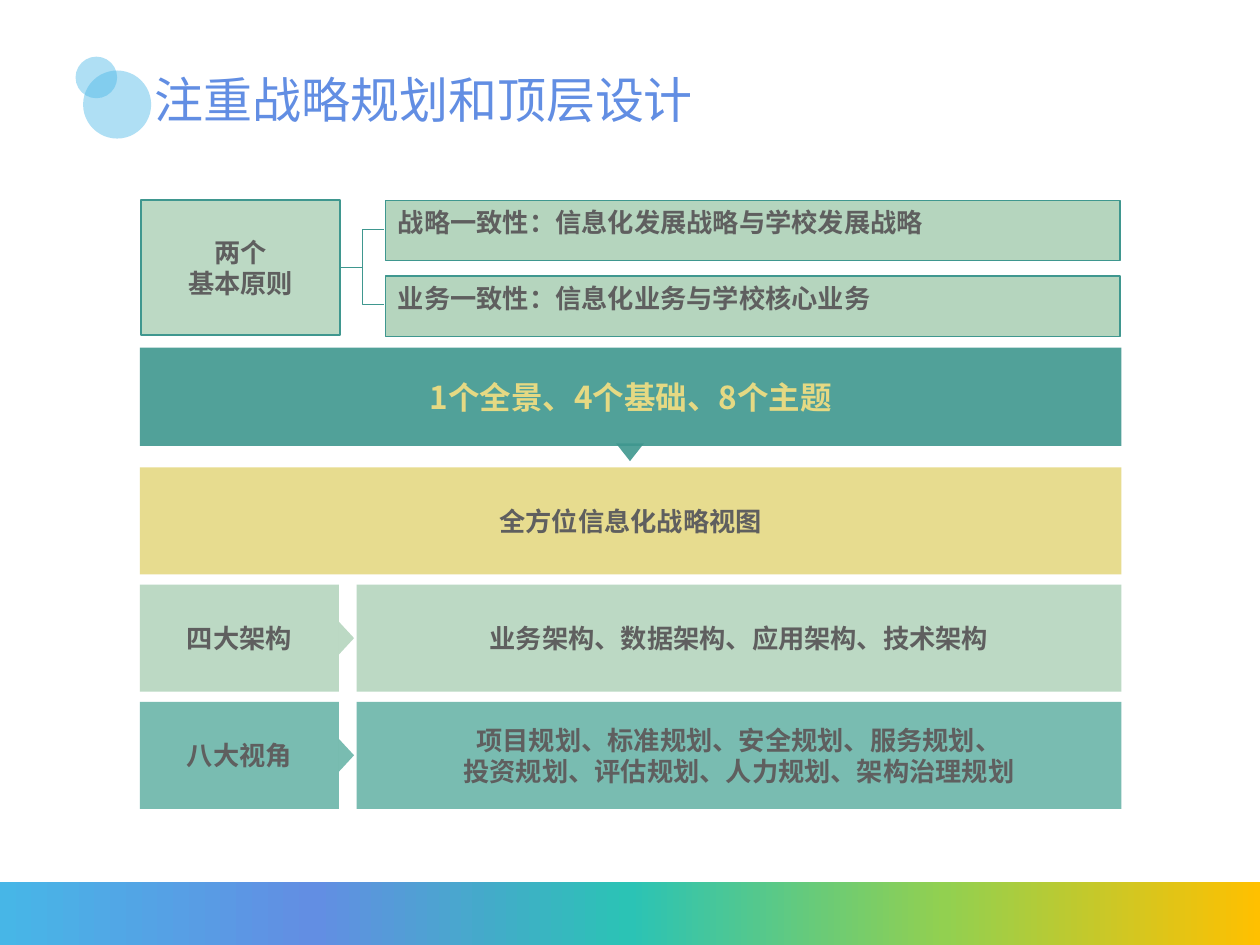
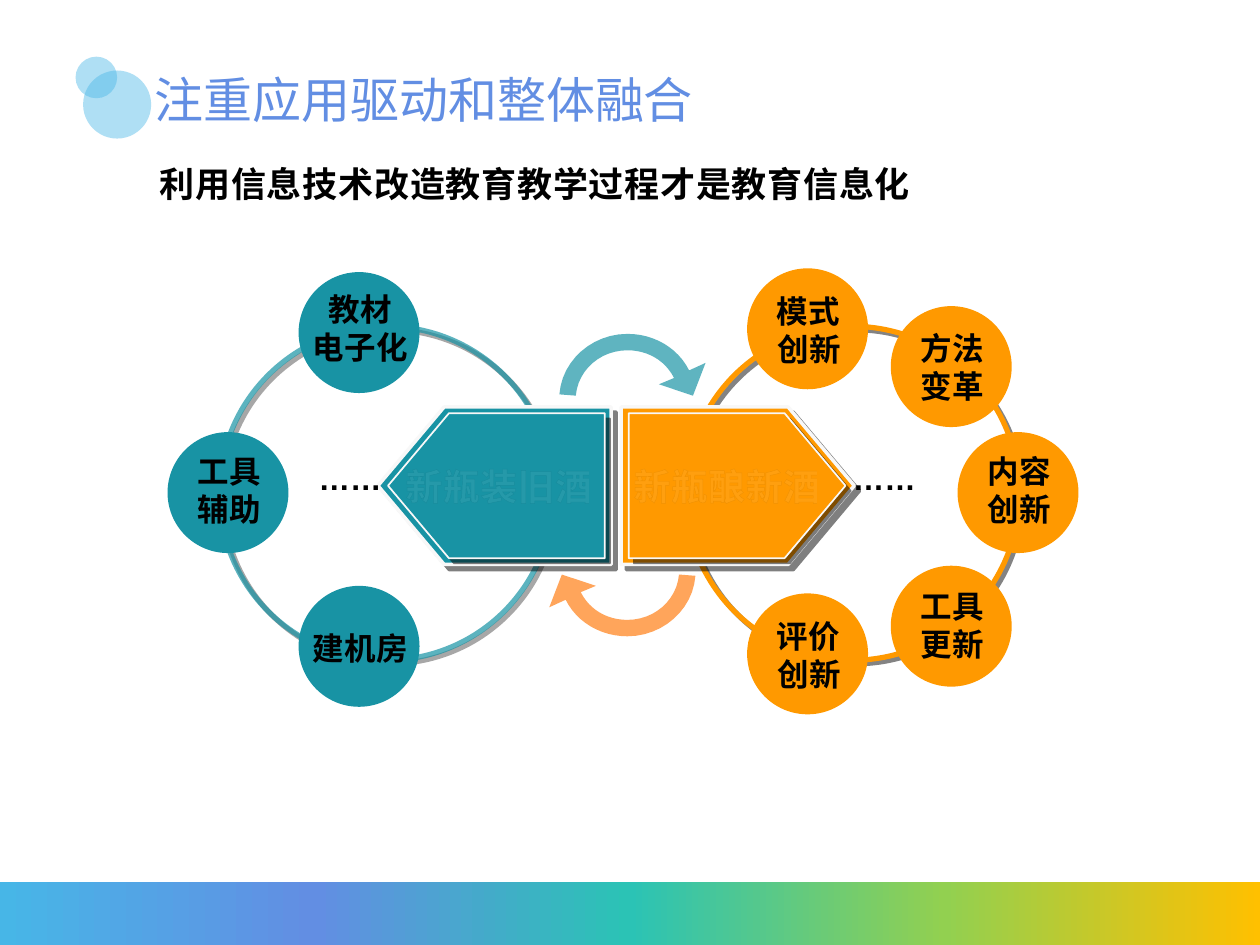
from dataclasses import dataclass
from typing import Any, Optional

from lxml import etree
from pptx import Presentation
from pptx.dml.color import RGBColor
from pptx.enum.shapes import MSO_CONNECTOR, MSO_SHAPE
from pptx.enum.text import MSO_ANCHOR, PP_ALIGN
from pptx.oxml.ns import qn
from pptx.util import Inches, Pt

RECT, OVAL = MSO_SHAPE.RECTANGLE, MSO_SHAPE.OVAL
WEDGE, PLATE = MSO_SHAPE.ISOSCELES_TRIANGLE, MSO_SHAPE.PENTAGON
ELBOW = MSO_CONNECTOR.ELBOW
LEFT, CENTER = PP_ALIGN.LEFT, PP_ALIGN.CENTER
TOP, MIDDLE = MSO_ANCHOR.TOP, MSO_ANCHOR.MIDDLE

# The slide is a grid of 100 columns and 75 rows of square cells.
COLS, ROWS = 100, 75
CELL = Inches(0.1)

HUES = {
    "sky": "47B6E7", "blue": "628EE3", "mint": "2BC3B5", "lime": "92D050",
    "gold": "FFC000", "sage": "B5D5BE", "sea": "6BB5A9", "pine": "3F978F",
    "straw": "E5D983", "gray": "5F5F5F", "teal": "1893A4", "orange": "FF9900",
    "peach": "FF8F33", "pale": "F8F8F8", "white": "FFFFFF", "black": "000000",
    "soot": "080808", "ink": "101A26",
}
BAND = {0: "sky", 25: "blue", 50: "mint", 75: "lime", 100: "gold"}
HEAD = {0: "sky", 33: "blue", 66: "mint", 100: "lime"}
SANS, LATIN = "Noto Sans CJK SC", "Arial"


@dataclass
class Text:
    words: str
    size: float = 15
    hue: str = "gray"
    align: Any = CENTER
    anchor: Any = MIDDLE
    font: str = SANS
    bold: bool = True
    rim: bool = False
    wrap: bool = True


@dataclass
class Shade:
    hue: str
    reach: float


@dataclass
class Box:
    x: float
    y: float
    w: float
    h: float
    fill: Optional[str] = None
    alpha: int = 100
    kind: Any = RECT
    edge: Optional[str] = None
    weight: float = 1
    faint: int = 100
    turn: float = 0
    flip: bool = False
    point: Optional[float] = None
    shade: Optional[Shade] = None
    text: Optional[Text] = None


@dataclass
class Node:
    """A circle with a label, whose box has its own width and drop."""
    x: float
    y: float
    hue: str
    words: str
    width: float
    drop: float


def cells(*counts: float) -> list[int]:
    return [round(n * CELL) for n in counts]


def color(name: str) -> RGBColor:
    return RGBColor.from_string(HUES[name])


def tint(node: Any, name: str, alpha: int = 100) -> None:
    """Append a colour with its opacity to a fill or effect node."""
    mark = etree.SubElement(node, qn("a:srgbClr"), val=HUES[name])
    if alpha < 100:
        etree.SubElement(mark, qn("a:alpha"), val=str(alpha * 1000))


def fade(node: Any, alpha: int) -> None:
    if alpha < 100:
        mark = node.find(qn("a:solidFill")).find(qn("a:srgbClr"))
        etree.SubElement(mark, qn("a:alpha"), val=str(alpha * 1000))


def blend(fill: Any, node: Any, stops: dict[int, str]) -> None:
    fill.gradient()
    fill.gradient_angle = 0
    track = node.find(qn("a:gradFill")).find(qn("a:gsLst"))
    for stop in list(track):
        track.remove(stop)
    for place, name in stops.items():
        tint(etree.SubElement(track, qn("a:gs"), pos=str(place * 1000)), name)


def paint(shape: Any, name: str, alpha: int) -> None:
    shape.fill.solid()
    shape.fill.fore_color.rgb = color(name)
    fade(shape.element.spPr, alpha)


def cast(shape: Any, shade: Optional[Shade]) -> None:
    """Drop a hard shadow down to the right, or none at all."""
    shape.shadow.inherit = False
    if shade:
        effects = shape.element.spPr.find(qn("a:effectLst"))
        drop = etree.SubElement(effects, qn("a:outerShdw"), blurRad="0",
                                dist=str(Pt(shade.reach)), dir="2700000",
                                algn="ctr", rotWithShape="0")
        tint(drop, shade.hue, 50)


def rim(props: Any) -> None:
    """Give a run loose spacing and a barely visible outline."""
    props.set("spc", "40")
    line = etree.Element(qn("a:ln"), w=str(Pt(1.06)))
    tint(etree.SubElement(line, qn("a:solidFill")), "ink", 6)
    etree.SubElement(line, qn("a:prstDash"), val="solid")
    props.insert(0, line)


def write(frame: Any, text: Text) -> None:
    frame.text = text.words
    frame.word_wrap = text.wrap
    frame.vertical_anchor = text.anchor
    for part in frame.paragraphs:
        part.alignment = text.align
        for run in part.runs:
            font = run.font
            font.size, font.bold, font.name = Pt(text.size), text.bold, text.font
            font.color.rgb = color(text.hue)
            props = run._r.get_or_add_rPr()
            etree.SubElement(props, qn("a:ea"), typeface=SANS)
            if text.rim:
                rim(props)


def label(slide: Any, x: float, y: float, w: float, h: float, text: Text) -> Any:
    frame = slide.shapes.add_textbox(*cells(x, y, w, h)).text_frame
    write(frame, text)
    return frame


def draw(slide: Any, box: Box) -> Any:
    shape = slide.shapes.add_shape(box.kind, *cells(box.x, box.y, box.w, box.h))
    shape.rotation = box.turn
    if box.point is not None:
        shape.adjustments[0] = box.point
    if box.flip:
        shape.element.spPr.xfrm.set("flipH", "1")
    if box.fill:
        paint(shape, box.fill, box.alpha)
    else:
        shape.fill.background()
    if box.edge:
        shape.line.color.rgb = color(box.edge)
        shape.line.width = Pt(box.weight)
        fade(shape.line._get_or_add_ln(), box.faint)
    else:
        shape.line.fill.background()
    cast(shape, box.shade)
    if box.text:
        write(shape.text_frame, box.text)
    return shape


def start(deck: Any, title: str) -> Any:
    """Add a slide with the shared band, bubbles and title."""
    slide = deck.slides.add_slide(deck.slide_layouts[6])
    band = draw(slide, Box(0, 70, COLS, 5))
    blend(band.fill, band.element.spPr, BAND)
    for x, y, size in ((6.6, 5.6, 5.4), (6, 4.5, 3.3)):
        draw(slide, Box(x, y, size, size, "sky", 43, OVAL))
    frame = label(slide, 11.3, 3.1, 86.3, 10.1,
                  Text(title, 28, "blue", LEFT, font=LATIN, bold=False))
    part = frame.paragraphs[0]
    part.line_spacing = 0.9
    run = part.runs[0]
    blend(run.font.fill, run._r.get_or_add_rPr(), HEAD)
    return slide


def join(slide: Any, *ends: float) -> None:
    link = slide.shapes.add_connector(ELBOW, *cells(*ends))
    link.line.color.rgb = color("pine")
    link.line.width = Pt(0.5)
    etree.SubElement(link.element.spPr, qn("a:effectLst"))


def plan(deck: Any) -> None:
    slide = start(deck, "注重战略规划和顶层设计")
    rules = ("战略一致性：信息化发展战略与学校发展战略",
             "业务一致性：信息化业务与学校核心业务")
    for row, words in enumerate(rules):
        draw(slide, Box(30.6, 15.9 + 6 * row, 58.3, 4.8, "sage", edge="pine",
                        weight=0.75, text=Text(words, align=LEFT, anchor=TOP)))
        join(slide, 27, 21.2, 30.5, 18.2 + 6 * row)
    draw(slide, Box(11.2, 15.9, 15.8, 10.7, "sage", 90, edge="pine",
                    text=Text("两个\n基本原则")))

    left, wide, tall, pitch = 11.1, 77.9, 8.5, 9.3
    draw(slide, Box(left, 37.1, wide, tall, "straw", 90,
                    text=Text("全方位信息化战略视图")))
    draw(slide, Box(left, 27.6, wide, 7.8, "pine", 90,
                    text=Text("1个全景、4个基础、8个主题", 18, "straw")))
    draw(slide, Box(48.9, 35.2, 2.2, 1.4, "pine", 90, WEDGE, turn=180))
    views = (("sage", "四大架构", "业务架构、数据架构、应用架构、技术架构"),
             ("sea", "八大视角", "项目规划、标准规划、安全规划、服务规划、\n"
                             "投资规划、评估规划、人力规划、架构治理规划"))
    for row, (hue, name, words) in enumerate(views):
        y = 46.4 + pitch * row
        draw(slide, Box(left, y, 15.8, tall, hue, 90, text=Text(name)))
        draw(slide, Box(28.3, y, 60.7, tall, hue, 90, text=Text(words)))
        draw(slide, Box(26.2, y + 3.65, 2.6, 1.2, hue, 90, WEDGE, turn=90))


# Outline of the upper arrow: a pair is a corner, three pairs are a curve.
ARROW = (
    ((53.5, 30),),
    ((52.8, 28.6), (51.4, 27.8), (49.8, 27.8)),
    ((47.7, 27.8), (45.9, 29.3), (45.7, 31.4)),
    ((44.4, 31.3),),
    ((44.6, 28.6), (47, 26.5), (49.8, 26.5)),
    ((51.9, 26.5), (53.8, 27.6), (54.7, 29.4)),
    ((56, 28.8),), ((55, 31.4),), ((52.3, 30.5),),
)
HUB = (49.8, 38.5)
STEPS = 12


def trace() -> list[tuple[float, float]]:
    """Turn the arrow's corners and curves into a chain of points."""
    chain = [ARROW[0][0]]
    for part in ARROW[1:]:
        if len(part) == 1:
            chain.append(part[0])
            continue
        knots = (chain[-1], *part)
        for step in range(1, STEPS + 1):
            t = step / STEPS
            shares = ((1 - t) ** 3, 3 * t * (1 - t) ** 2, 3 * t * t * (1 - t), t ** 3)
            chain.append((sum(s * k[0] for s, k in zip(shares, knots)),
                          sum(s * k[1] for s, k in zip(shares, knots))))
    return chain


def swing(slide: Any, chain: list[tuple[float, float]], hue: str, alpha: int) -> None:
    first, *rest = [cells(*spot) for spot in chain]
    pen = slide.shapes.build_freeform(*first)
    pen.add_line_segments(rest, close=True)
    shape = pen.convert_to_shape()
    paint(shape, hue, alpha)
    shape.line.fill.background()
    cast(shape, None)


NODES = (
    Node(59.3, 21.3, "orange", "模式创新", 8.8, 1.4),
    Node(70.7, 24.3, "orange", "方法变革", 9.1, 1.3),
    Node(76, 34.3, "orange", "内容创新", 9.4, 1.1),
    Node(70.7, 44.9, "orange", "工具更新", 8.8, 1.2),
    Node(59.3, 47.1, "orange", "评价创新", 8.8, 1.4),
    Node(23.7, 21.6, "teal", "教材\n电子化", 10.6, 0.9),
    Node(13.3, 34.3, "teal", "工具辅助", 8.1, 1.1),
    Node(23.7, 46.5, "teal", "建机房", 10.6, 2.9),
)
DISC = 9.6


def fuse(deck: Any) -> None:
    slide = start(deck, "注重应用驱动和整体融合")
    near, far = Shade("soot", 2.8), Shade("black", 4.2)
    for x, hue, faint in ((54.4, "orange", 100), (17.4, "teal", 69)):
        draw(slide, Box(x, 25.9, 26.5, 26.5, kind=OVAL, edge=hue, weight=3,
                        faint=faint, shade=near))
    for outer, inner, hue, flip in ((30, 30.8, "teal", True),
                                    (49.3, 49.9, "orange", False)):
        draw(slide, Box(outer, 32.3, 18.5, 12.5, hue, kind=PLATE, edge="pale",
                        weight=2, flip=flip, point=0.42, shade=far))
        draw(slide, Box(inner, 32.8, 17.2, 11.5, hue, kind=PLATE, edge="pale",
                        flip=flip, point=0.42, shade=far))
    chain = trace()
    swing(slide, chain, "teal", 69)
    swing(slide, [(2 * HUB[0] - x, 2 * HUB[1] - y) for x, y in chain], "peach", 80)
    for x in (24.3, 66.7):
        label(slide, x, 35.9, 7.7, 4,
              Text("……", 18, "black", LEFT, TOP, LATIN))
    for x, words in ((31.2, "新瓶装旧酒"), (49.3, "新瓶酿新酒")):
        label(slide, x, 36.3, 18.5, 4.5,
              Text(words, 21, "white", LEFT, TOP, rim=True))
    for node in NODES:
        draw(slide, Box(node.x, node.y, DISC, DISC, node.hue, kind=OVAL))
        label(slide, node.x + (DISC - node.width) / 2 + 0.1, node.y + node.drop,
              node.width, 7.1,
              Text(node.words, 18, "black", anchor=TOP, rim=True))
    label(slide, 11.7, 12.4, 62, 4.4,
          Text("利用信息技术改造教育教学过程才是教育信息化", 20, "black",
               LEFT, TOP, rim=True, wrap=False))


def main() -> None:
    deck = Presentation()
    deck.slide_width, deck.slide_height = cells(COLS, ROWS)
    plan(deck)
    fuse(deck)
    deck.save("out.pptx")


if __name__ == "__main__":
    main()
